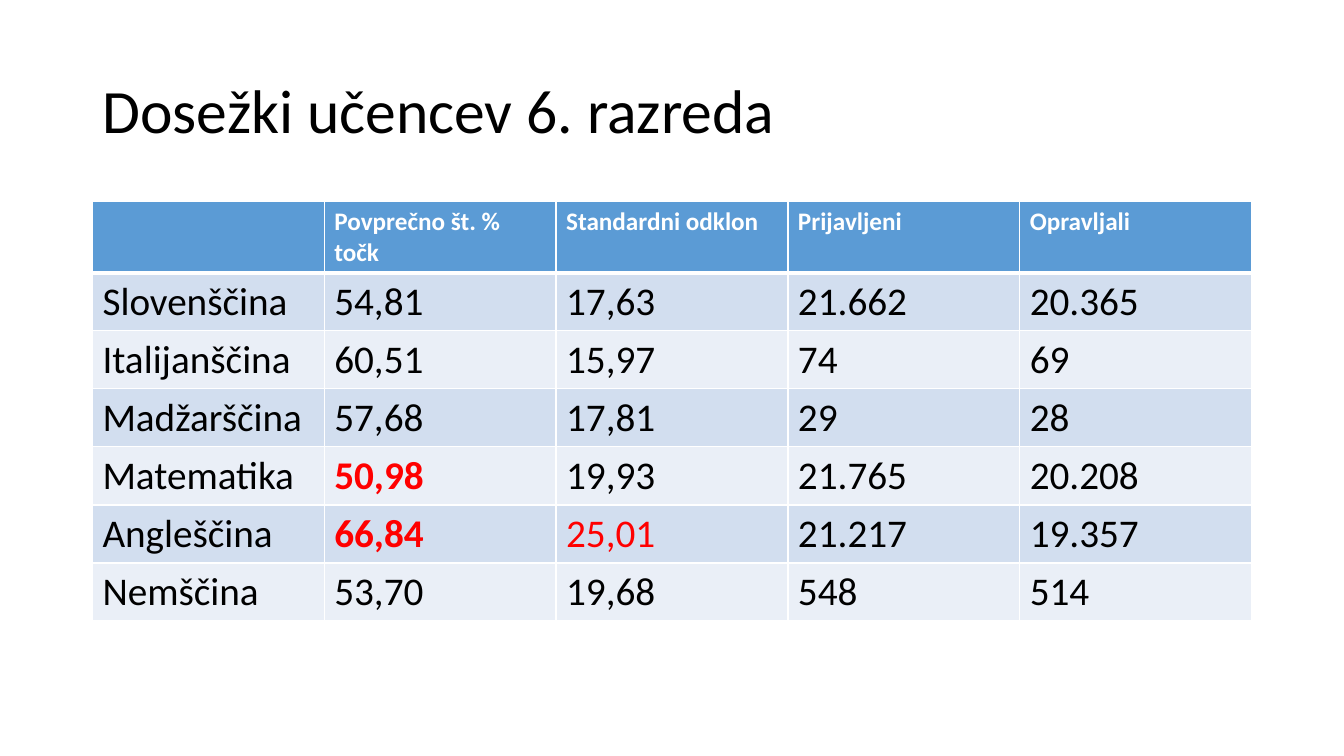
from dataclasses import dataclass

from lxml import etree
from pptx import Presentation
from pptx.dml.color import RGBColor
from pptx.enum.text import MSO_ANCHOR, MSO_AUTO_SIZE, PP_ALIGN
from pptx.oxml.ns import qn
from pptx.util import Cm, Pt

LEFT = PP_ALIGN.LEFT
MIDDLE = MSO_ANCHOR.MIDDLE
NO_AUTOFIT = MSO_AUTO_SIZE.NONE

FONT = "Calibri"
BLACK, WHITE, RED = "000000", "FFFFFF", "FF0000"
HEADER_FILL = "5B9BD5"
BAND_FILLS = ("D2DEEF", "EAEFF7")
MARGIN, CONTENT_WIDTH = Cm(2.33), Cm(29.21)
ROW_HEIGHT = Cm(1.03)


@dataclass(frozen=True)
class TextStyle:
    size: int
    color: str = BLACK
    bold: bool = False


TITLE = TextStyle(44)
HEADER = TextStyle(18, WHITE, True)
BODY = TextStyle(28)
HIGHLIGHTS = {
    "50,98": TextStyle(28, RED, True),
    "66,84": TextStyle(28, RED, True),
    "25,01": TextStyle(28, RED),
}

RESULTS = (
    ("", "Povprečno št. % točk", "Standardni odklon", "Prijavljeni", "Opravljali"),
    ("Slovenščina", "54,81", "17,63", "21.662", "20.365"),
    ("Italijanščina", "60,51", "15,97", "74", "69"),
    ("Madžarščina", "57,68", "17,81", "29", "28"),
    ("Matematika", "50,98", "19,93", "21.765", "20.208"),
    ("Angleščina", "66,84", "25,01", "21.217", "19.357"),
    ("Nemščina", "53,70", "19,68", "548", "514"),
)


def rgb(color: str) -> RGBColor:
    return RGBColor.from_string(color)


def format_text(text_frame, style: TextStyle) -> None:
    for paragraph in text_frame.paragraphs:
        paragraph.alignment = LEFT
        for run in paragraph.runs:
            run.font.name = FONT
            run.font.size = Pt(style.size)
            run.font.bold = style.bold
            run.font.color.rgb = rgb(style.color)


def set_borders(cell, top: float, bottom: float) -> None:
    """Give a cell white borders; the side borders are one point wide."""
    properties = cell._tc.get_or_add_tcPr()
    widths = {"a:lnL": 1, "a:lnR": 1, "a:lnT": top, "a:lnB": bottom}
    for position, (tag, width) in enumerate(widths.items()):
        line = etree.Element(qn(tag), w=str(Pt(width)))
        fill = etree.SubElement(line, qn("a:solidFill"))
        etree.SubElement(fill, qn("a:srgbClr"), val=WHITE)
        properties.insert(position, line)


def add_title(slide, text: str) -> None:
    title = slide.shapes.title
    title.left, title.top = MARGIN, Cm(1.01)
    title.width, title.height = CONTENT_WIDTH, Cm(3.68)
    text_frame = title.text_frame
    text_frame.text = text
    text_frame.auto_size = NO_AUTOFIT
    text_frame.vertical_anchor = MIDDLE
    text_frame.paragraphs[0].line_spacing = 0.9
    format_text(text_frame, TITLE)


def add_results_table(slide) -> None:
    row_count, column_count = len(RESULTS), len(RESULTS[0])
    table = slide.shapes.add_table(
        row_count, column_count, MARGIN, Cm(5.07), CONTENT_WIDTH, ROW_HEIGHT * row_count
    ).table
    for row_index, values in enumerate(RESULTS):
        is_header = row_index == 0
        fill_color = HEADER_FILL if is_header else BAND_FILLS[(row_index - 1) % 2]
        for column_index, value in enumerate(values):
            cell = table.cell(row_index, column_index)
            cell.text_frame.text = value
            format_text(cell.text_frame, HEADER if is_header else HIGHLIGHTS.get(value, BODY))
            cell.fill.solid()
            cell.fill.fore_color.rgb = rgb(fill_color)
            set_borders(cell, top=3 if row_index == 1 else 1, bottom=3 if is_header else 1)


def main() -> None:
    presentation = Presentation()
    presentation.slide_width, presentation.slide_height = Cm(33.87), Cm(19.05)
    title_only_layout = presentation.slide_layouts[5]
    slide = presentation.slides.add_slide(title_only_layout)
    add_title(slide, "Dosežki učencev 6. razreda")
    add_results_table(slide)
    presentation.save("out.pptx")


if __name__ == "__main__":
    main()
